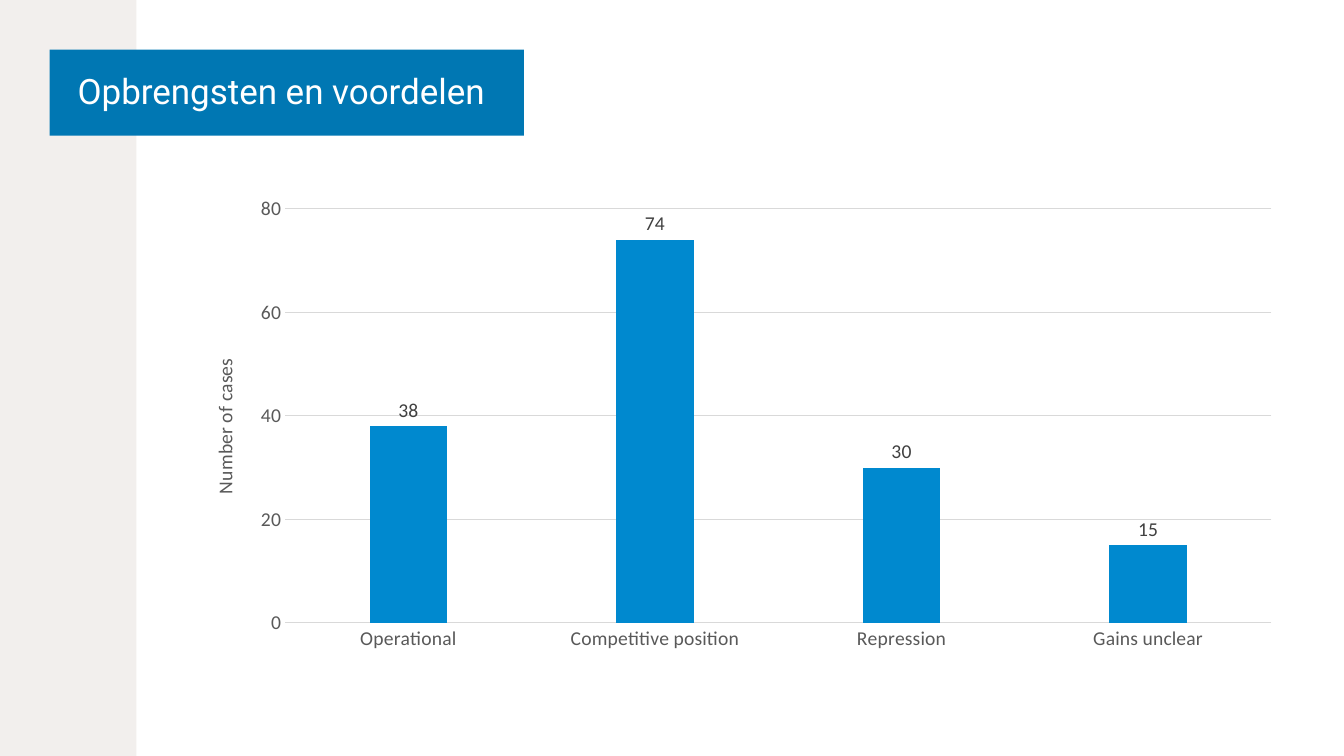
from dataclasses import dataclass

from lxml import etree
from pptx import Presentation
from pptx import util as u
from pptx.chart import data as cd
from pptx.dml.color import RGBColor
from pptx.enum import chart as ec, shapes, text
from pptx.oxml.ns import qn

HUES = {
    "band": "F2EFED",
    "title": "0077B3",
    "white": "FFFFFF",
    "bar": "0089CF",
    "grid": "D9D9D9",
    "axis": "595959",
    "label": "404040",
}
CASES = {"Operational": 38, "Competitive position": 74, "Repression": 30, "Gains unclear": 15}


@dataclass
class Panel:
    left: float
    top: float
    width: float
    height: float
    hue: str
    words: str = ""


PANELS = [
    Panel(0, 0, 97.5, 540, "band"),
    Panel(35.5, 35.5, 339, 61.5, "title", "Opbrengsten en voordelen"),
]


def color(name: str) -> RGBColor:
    return RGBColor.from_string(HUES[name])


def style(font, face: str, size: float, hue: str) -> None:
    font.name, font.size, font.bold = face, u.Pt(size), False
    font.color.rgb = color(hue)


def rule(line) -> None:
    line.color.rgb = color("grid")
    line.width = u.Pt(0.75)


def draw(slide, panel: Panel) -> None:
    box = slide.shapes.add_shape(
        shapes.MSO_SHAPE.RECTANGLE,
        *map(u.Pt, (panel.left, panel.top, panel.width, panel.height)))
    box.shadow.inherit = False
    box.fill.solid()
    box.fill.fore_color.rgb = color(panel.hue)
    box.line.fill.background()
    if panel.words:
        frame = box.text_frame
        frame.word_wrap = False
        frame.vertical_anchor = text.MSO_ANCHOR.MIDDLE
        frame.margin_left = u.Pt(20)
        frame.margin_top = frame.margin_right = frame.margin_bottom = u.Pt(17)
        para = frame.paragraphs[0]
        para.text = panel.words
        para.alignment = text.PP_ALIGN.LEFT
        para.line_spacing = 0.9
        style(para.font, "Roboto", 25, "white")


def place(node, index: int, **parts) -> None:
    """Fix a chart part at fractions of the chart's size."""
    for old in node.findall(qn("c:layout")):
        node.remove(old)
    layout = etree.Element(qn("c:layout"))
    node.insert(index, layout)
    manual = etree.SubElement(layout, qn("c:manualLayout"))
    for tag, value in parts.items():
        etree.SubElement(manual, qn(f"c:{tag}")).set("val", str(value))


def plot(slide) -> None:
    data = cd.CategoryChartData()
    data.categories = list(CASES)
    data.add_series("Series 1", list(CASES.values()))
    chart = slide.shapes.add_chart(
        ec.XL_CHART_TYPE.COLUMN_CLUSTERED,
        *map(u.Pt, (132.5, 132.5, 792, 336)), data).chart
    chart.has_title = chart.has_legend = False
    style(chart.font, "Calibri", 14, "axis")

    # Columns and their values
    bars = chart.plots[0]
    bars.gap_width, bars.overlap, bars.vary_by_categories = 219, -27, False
    fill = bars.series[0].format.fill
    fill.solid()
    fill.fore_color.rgb = color("bar")
    bars.has_data_labels = True
    tags = bars.data_labels
    tags.show_value = True
    tags.position = ec.XL_LABEL_POSITION.OUTSIDE_END
    style(tags.font, "Calibri", 14, "label")

    # Axes
    cat, val = chart.category_axis, chart.value_axis
    for axis in (cat, val):
        axis.major_tick_mark = axis.minor_tick_mark = ec.XL_TICK_MARK.NONE
        style(axis.tick_labels.font, "Calibri", 14, "axis")
    rule(cat.format.line)
    val.format.line.fill.background()
    rule(val.major_gridlines.format.line)
    val.minimum_scale, val.maximum_scale, val.major_unit = 0, 80, 20

    # Upright axis title
    title = val.axis_title
    para = title.text_frame.paragraphs[0]
    para.text = "Number of cases"
    style(para.font, "Calibri", 14, "axis")
    node = title._element
    body = next(node.iter(qn("a:bodyPr")))
    body.set("rot", "-5400000")
    body.set("vert", "horz")
    place(node, 1, xMode="edge", yMode="edge", x=0.02, y=0.36)

    area = next(chart._chartSpace.iter(qn("c:plotArea")))
    place(area, 0, layoutTarget="inner", xMode="edge", yMode="edge",
          x=0.09, y=0.05, w=0.89, h=0.88)


def main() -> None:
    deck = Presentation()
    deck.slide_width, deck.slide_height = u.Pt(960.5), u.Pt(540)
    slide = deck.slides.add_slide(deck.slide_layouts[6])
    for panel in PANELS:
        draw(slide, panel)
    plot(slide)
    deck.save("out.pptx")


if __name__ == "__main__":
    main()
